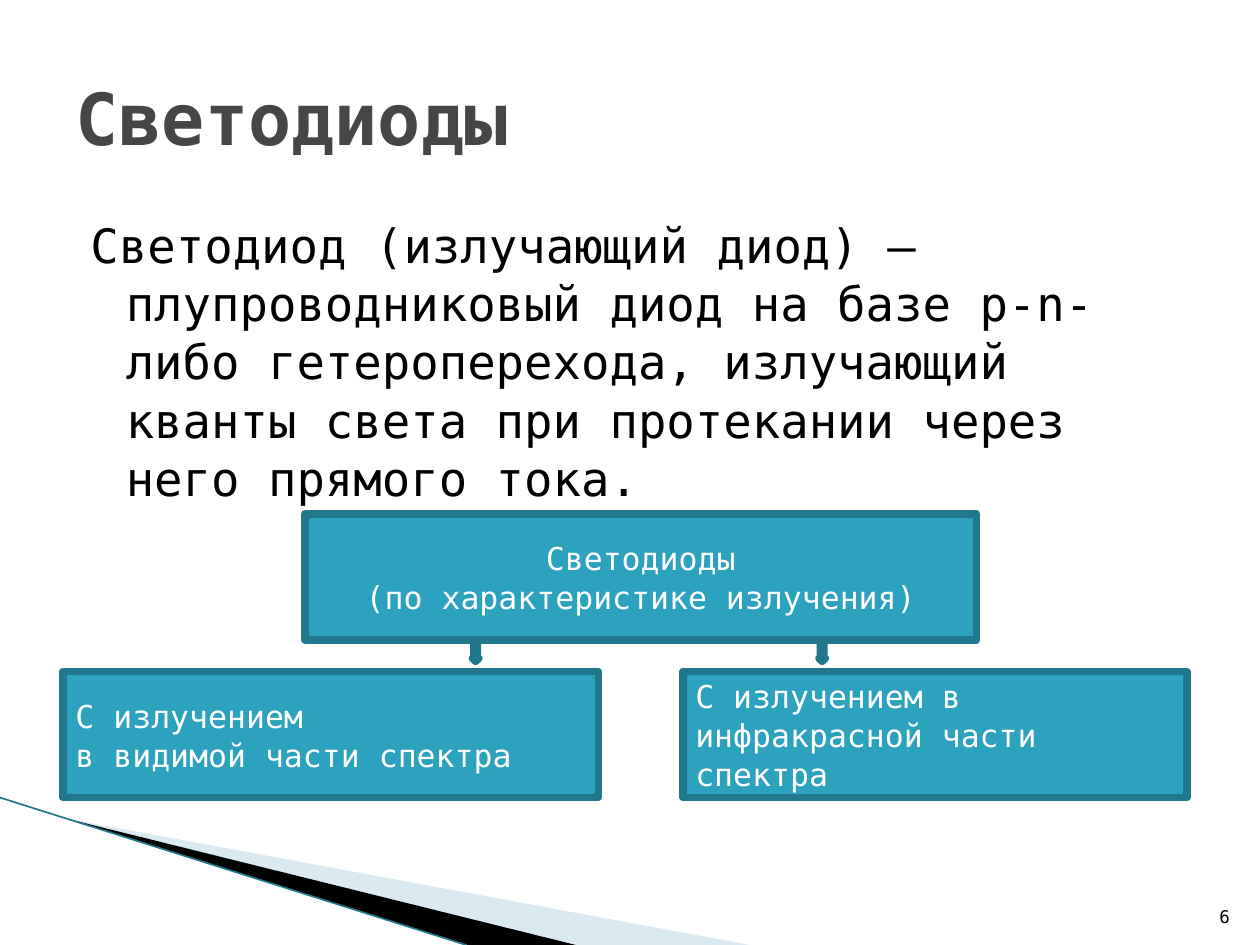
from dataclasses import dataclass
from pptx import Presentation
from pptx.dml.color import RGBColor
from pptx.enum.shapes import MSO_CONNECTOR, MSO_SHAPE
from pptx.enum.text import MSO_ANCHOR, PP_ALIGN
from pptx.oxml.ns import qn
from pptx.util import Pt
from lxml.etree import SubElement

PX = 9144


@dataclass(frozen=True)
class Theme:
    font: str = "DejaVu Sans Mono"
    title_size: int = 41
    body_size: int = 27
    box_size: int = 18
    number_size: int = 10
    line_width: float = 4.33
    line_spacing: float = 1.03
    title: str = "464646"
    black: str = "000000"
    white: str = "FFFFFF"
    accent: str = "2DA2BF"
    border: str = "21788D"
    pale: str = "A0CBDC"


THEME = Theme()


def emu(*lengths):
    return [length * PX for length in lengths]


def color(value):
    return RGBColor.from_string(value)


def write(frame, lines, size, ink, align=PP_ALIGN.LEFT, anchor=MSO_ANCHOR.TOP, bold=False):
    frame.word_wrap = True
    frame.vertical_anchor = anchor
    frame.text = "\n".join(lines)
    for para in frame.paragraphs:
        para.alignment = align
        para.font.name = THEME.font
        para.font.size = Pt(size)
        para.font.bold = bold
        para.font.color.rgb = color(ink)


def add_wedge(page, points, fill, opacity=100):
    builder = page.shapes.build_freeform(*points[0], scale=PX)
    builder.add_line_segments(points[1:], close=True)
    wedge = builder.convert_to_shape()
    wedge.shadow.inherit = False
    wedge.fill.solid()
    wedge.fill.fore_color.rgb = color(fill)
    wedge.line.fill.background()
    if opacity < 100:
        tint = wedge.fill._xPr.find(qn("a:solidFill"))[0]
        SubElement(tint, qn("a:alpha"), val=str(opacity * 1000))


def add_corner(page, left, top, width, height):
    right, bottom = left + width, top + height
    start = (left + 54, top + 17)
    add_wedge(page, [start, (right, bottom), (right - 139, bottom)], THEME.pale, 40)
    add_wedge(page, [start, (right - 138, bottom), (right - 224, bottom)], THEME.black)
    edge = page.shapes.add_connector(
        MSO_CONNECTOR.STRAIGHT, *emu(left, top, right - 225, bottom))
    edge.line.color.rgb = color(THEME.border)
    edge.line.width = Pt(0.95)
    SubElement(edge._element.spPr, qn("a:effectLst"))


def add_title(page, text, *box):
    title = page.shapes.title
    title.left, title.top, title.width, title.height = emu(*box)
    write(title.text_frame, [text], THEME.title_size, THEME.title,
          anchor=MSO_ANCHOR.MIDDLE, bold=True)


def add_definition(page, text, *box):
    frame = page.shapes.add_textbox(*emu(*box)).text_frame
    write(frame, [text], THEME.body_size, THEME.black)
    para = frame.paragraphs[0]
    para.line_spacing = THEME.line_spacing
    properties = para._p.get_or_add_pPr()
    properties.set("marL", str(40 * PX))
    properties.set("indent", str(-28 * PX))


def add_block(page, kind, *box):
    block = page.shapes.add_shape(kind, *emu(*box))
    block.shadow.inherit = False
    block.fill.solid()
    block.fill.fore_color.rgb = color(THEME.accent)
    block.line.color.rgb = color(THEME.border)
    block.line.width = Pt(THEME.line_width)
    return block


def add_scheme(page, left, top):
    boxes = [
        (192, 0, 533, ["Светодиоды", "(по характеристике излучения)"], PP_ALIGN.CENTER),
        (0, 125, 425, ["С излучением", "в видимой части спектра"], PP_ALIGN.LEFT),
        (492, 125, 400, ["С излучением в инфракрасной части спектра"], PP_ALIGN.LEFT),
    ]
    for x, y, width, lines, align in boxes:
        block = add_block(page, MSO_SHAPE.FLOWCHART_PROCESS, left + x, top + y, width, 100)
        write(block.text_frame, lines, THEME.box_size, THEME.white, align, MSO_ANCHOR.MIDDLE)
        for para in block.text_frame.paragraphs:
            para.line_spacing = THEME.line_spacing
    for x in (325, 600):
        add_block(page, MSO_SHAPE.DOWN_ARROW, left + x, top + 100, 5, 17)


def add_number(page, text, *box):
    frame = page.shapes.add_textbox(*emu(*box)).text_frame
    write(frame, [text], THEME.number_size, THEME.black, PP_ALIGN.RIGHT, MSO_ANCHOR.BOTTOM)


def main():
    deck = Presentation()
    deck.slide_width, deck.slide_height = emu(1000, 750)
    page = deck.slides.add_slide(deck.slide_layouts[5])
    add_corner(page, 0, 633, 595, 117)
    add_title(page, "Светодиоды", 50, 30, 900, 125)
    add_definition(
        page,
        "Светодиод (излучающий диод) – плупроводниковый диод на базе p-n- либо "
        "гетероперехода, излучающий кванты света при протекании через него прямого тока.",
        50, 165, 900, 240)
    add_scheme(page, 50, 408)
    add_number(page, "6", 946, 701, 40, 40)
    deck.save("out.pptx")


if __name__ == "__main__":
    main()
